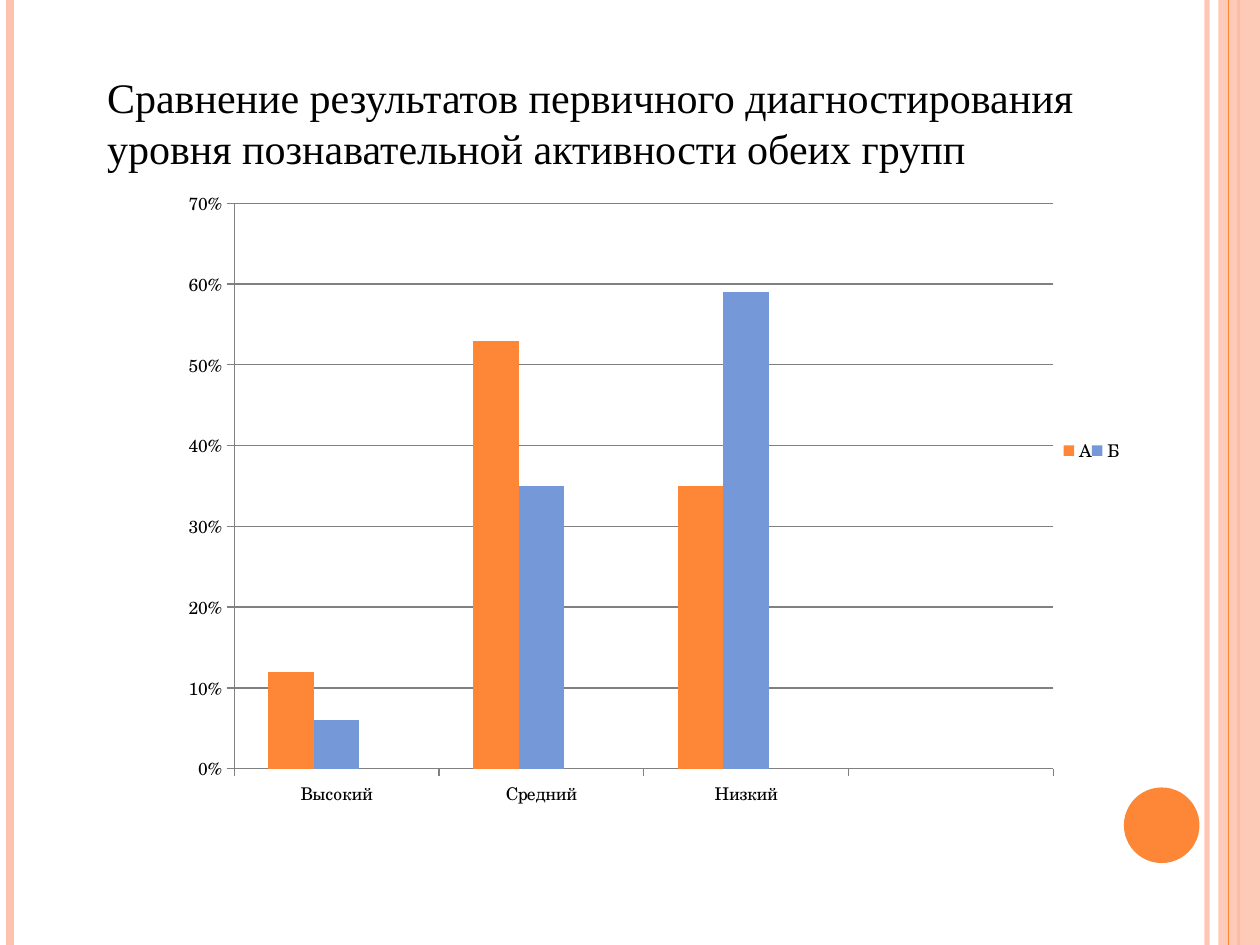
from dataclasses import dataclass

from pptx import Presentation
from pptx import oxml
from pptx import util as u
from pptx.chart.data import CategoryChartData
from pptx.dml.color import RGBColor
from pptx.enum import chart as charts
from pptx.enum import shapes, text
from pptx.oxml import ns


@dataclass(frozen=True)
class Theme:
    orange: RGBColor = RGBColor.from_string("FE8637")
    peach: RGBColor = RGBColor.from_string("FEC3AE")
    blue: RGBColor = RGBColor.from_string("7598D9")
    red: RGBColor = RGBColor.from_string("B32C16")
    grey: RGBColor = RGBColor.from_string("808080")
    black: RGBColor = RGBColor.from_string("000000")
    title_font: str = "Times New Roman"
    chart_font: str = "TeX Gyre Schola"
    title_size: u.Pt = u.Pt(24)
    chart_size: u.Pt = u.Pt(10)


def set_alpha(fill_element, percent):
    color = fill_element.find(".//" + ns.qn("a:srgbClr"))
    oxml.parse_xml
    alpha = color.makeelement(ns.qn("a:alpha"), {"val": str(percent * 1000)})
    color.append(alpha)


def manual_layout(parent, position, target, **bounds):
    for old in parent.findall(ns.qn("c:layout")):
        parent.remove(old)
    inner = '<c:layoutTarget val="inner"/>' if target else ""
    modes = '<c:xMode val="edge"/><c:yMode val="edge"/>'
    values = "".join(f'<c:{key} val="{value}"/>' for key, value in bounds.items())
    parent.insert(position, oxml.parse_xml(
        f'<c:layout {ns.nsdecls("c")}><c:manualLayout>{inner}{modes}{values}'
        "</c:manualLayout></c:layout>"))


theme = Theme()
deck = Presentation()
deck.slide_width, deck.slide_height = u.Inches(10), u.Inches(7.5)
page = deck.slides.add_slide(deck.slide_layouts[5])

decorations = [
    ("stripe", 9.58, theme.peach, 3, 93),
    ("stripe", 0.08, theme.peach, 4.5, 100),
    ("stripe", 9.83, theme.orange, 1.5, 100),
    ("band", 9.67, theme.peach, 0.33, 87),
    ("stripe", 9.75, theme.orange, 0.75, 100),
    ("circle", 8.92, theme.orange, 0.6, 100),
]
for kind, left, color, size, opacity in decorations:
    if kind == "stripe":
        stripe = page.shapes.add_connector(
            shapes.MSO_CONNECTOR.STRAIGHT, u.Inches(left), 0, u.Inches(left), deck.slide_height)
        stripe.line.color.rgb = color
        stripe.line.width = u.Pt(size)
        properties = stripe.element.spPr
        properties.append(properties.makeelement(ns.qn("a:effectLst"), {}))
    else:
        band = kind == "band"
        preset = shapes.MSO_SHAPE.RECTANGLE if band else shapes.MSO_SHAPE.OVAL
        ornament = page.shapes.add_shape(
            preset, u.Inches(left), u.Inches(0 if band else 6.25),
            u.Inches(size), u.Inches(7.5 if band else size))
        ornament.shadow.inherit = False
        ornament.fill.solid()
        ornament.fill.fore_color.rgb = color
        ornament.line.fill.background()
        properties = ornament.element.spPr
    if opacity < 100:
        set_alpha(properties, opacity)

data = CategoryChartData(number_format="0%")
data.categories = ["Высокий", "Средний", "Низкий", ""]
data.add_series("А", [0.12, 0.53, 0.35, None])
data.add_series("Б", [0.06, 0.35, 0.59, None])
data.add_series("Series 3", [None] * 4)
chart = page.shapes.add_chart(
    charts.XL_CHART_TYPE.COLUMN_CLUSTERED,
    u.Inches(1.33), u.Inches(1.41), u.Inches(7.56), u.Inches(5.1), data).chart
chart.has_title = False
chart.font.name = theme.chart_font
chart.font.size = theme.chart_size
chart.font.color.rgb = theme.black

plot = chart.plots[0]
plot.gap_width = 150
plot.overlap = 0
plot.vary_by_categories = False
for series, color in zip(plot.series, [theme.orange, theme.blue, theme.red]):
    series.format.fill.solid()
    series.format.fill.fore_color.rgb = color

for axis in (chart.category_axis, chart.value_axis):
    axis.major_tick_mark = charts.XL_TICK_MARK.OUTSIDE
    axis.minor_tick_mark = charts.XL_TICK_MARK.NONE
    axis.format.line.color.rgb = theme.grey
    axis.format.line.width = u.Pt(0.75)
scale = chart.value_axis
scale.minimum_scale, scale.maximum_scale, scale.major_unit = 0, 0.7, 0.1
scale.tick_labels.number_format = "0%"
scale.tick_labels.number_format_is_linked = False
scale.has_major_gridlines = True
scale.major_gridlines.format.line.color.rgb = theme.grey
scale.major_gridlines.format.line.width = u.Pt(0.75)

chart.has_legend = True
chart.legend.position = charts.XL_LEGEND_POSITION.RIGHT
chart.legend.include_in_layout = False
plot_area = chart.element.find(".//" + ns.qn("c:plotArea"))
legend = chart.element.find(".//" + ns.qn("c:legend"))
manual_layout(plot_area, 0, True, x=0.07, y=0.04, w=0.86, h=0.88)
manual_layout(legend, 1, False, x=0.94, y=0.33, w=0.06, h=0.19)
legend.insert(1, oxml.parse_xml(
    f'<c:legendEntry {ns.nsdecls("c")}><c:idx val="2"/><c:delete val="1"/></c:legendEntry>'))

title = page.shapes.title
title.left, title.top = u.Inches(0.75), u.Inches(0.52)
title.width, title.height = u.Inches(8.35), u.Inches(0.91)
frame = title.text_frame
frame.word_wrap = True
frame.auto_size = text.MSO_AUTO_SIZE.SHAPE_TO_FIT_TEXT
frame.vertical_anchor = text.MSO_ANCHOR.TOP
para = frame.paragraphs[0]
para.alignment = text.PP_ALIGN.LEFT
span = para.add_run()
span.text = "Сравнение результатов первичного диагностирования уровня познавательной активности обеих групп"
span.font.name = theme.title_font
span.font.size = theme.title_size
span.font.color.rgb = theme.black

deck.save("out.pptx")
